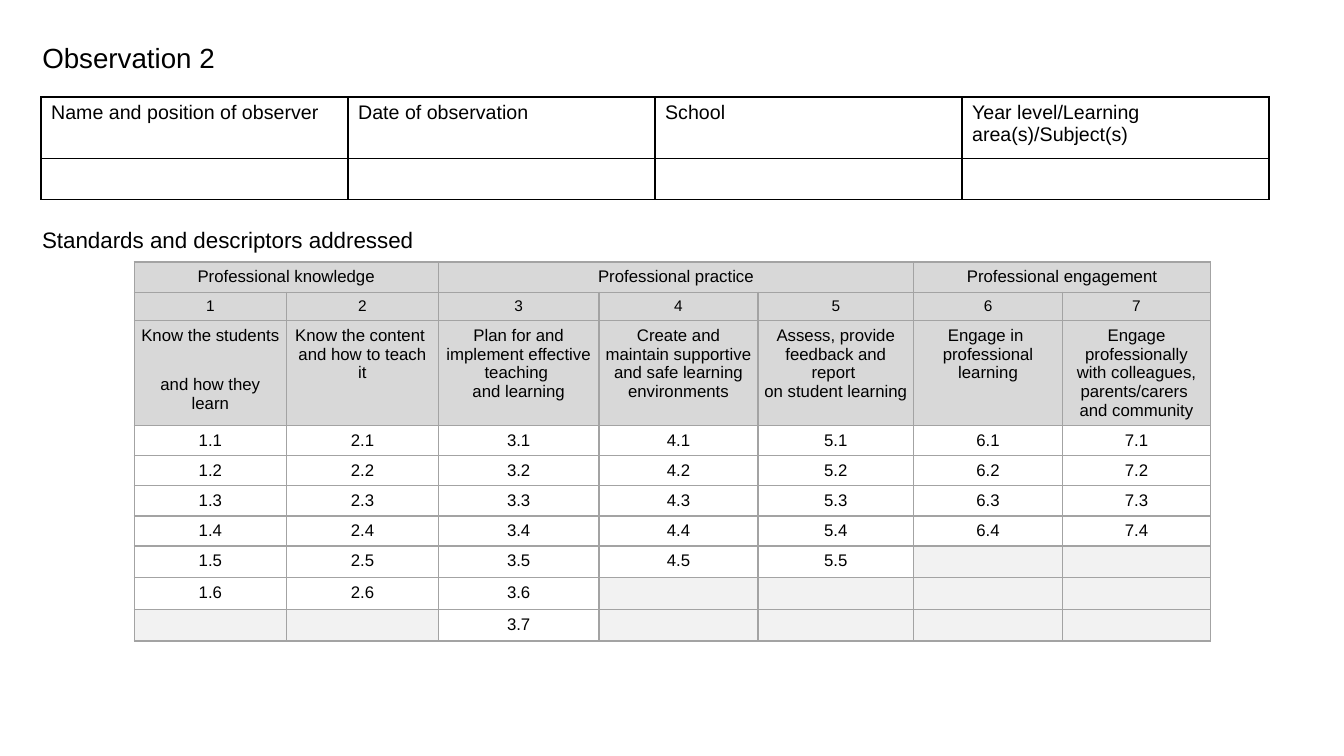
from lxml.etree import SubElement
from pptx import Presentation
from pptx.dml.color import RGBColor
from pptx.enum.text import MSO_ANCHOR, MSO_AUTO_SIZE, PP_ALIGN
from pptx.oxml.ns import qn
from pptx.util import Pt

FONT = "Arial"
BLACK, BORDER, HEADER, UNUSED = "000000", "A3A3A3", "D8D8D8", "F2F2F2"

OBSERVER_FIELDS = ["Name and position of observer", "Date of observation",
                   "School", "Year level/Learning area(s)/Subject(s)"]

# Domain name, first and last column
DOMAINS = [("Professional knowledge", 0, 1), ("Professional practice", 2, 4),
           ("Professional engagement", 5, 6)]

# Standard, number of descriptors, column width
STANDARDS = [
    ("Know the students \nand how they learn", 6, 108.9),
    ("Know the content \nand how to teach it", 6, 108.4),
    ("Plan for and implement effective teaching \nand learning", 7, 114.8),
    ("Create and maintain supportive and safe learning environments", 5, 113.6),
    ("Assess, provide feedback and report \non student learning", 5, 111.2),
    ("Engage in \nprofessional learning", 4, 106.3),
    ("Engage professionally with colleagues, parents/carers \nand community", 4, 105.8),
]


def rgb(color):
    return RGBColor.from_string(color)


def write(tf, text, size=12, color=BLACK, align=PP_ALIGN.LEFT, spacing=None):
    p = tf.paragraphs[0]
    p.alignment = align
    p.line_spacing = spacing
    for i, line in enumerate(text.split("\n")):
        if i:
            p.add_line_break()
        r = p.add_run()
        r.text = line
        r.font.name, r.font.size = FONT, Pt(size)
        r.font.color.rgb = rgb(color)


def write_heading(sp, text, size, left, top, width, height):
    sp.left, sp.top, sp.width, sp.height = Pt(left), Pt(top), Pt(width), Pt(height)
    tf = sp.text_frame
    tf.word_wrap = True
    tf.auto_size = MSO_AUTO_SIZE.NONE
    tf.vertical_anchor = MSO_ANCHOR.TOP
    write(tf, text, size=size, spacing=0.9)


def set_borders(cell, color, width=1):
    tc_pr = cell._tc.get_or_add_tcPr()
    for side in ("lnL", "lnR", "lnT", "lnB"):
        ln = SubElement(tc_pr, qn("a:" + side), w=str(Pt(width)))
        fill = SubElement(ln, qn("a:solidFill"))
        SubElement(fill, qn("a:srgbClr"), val=color)


def add_grid(s, left, top, widths, heights, border):
    """Add a plain table with every cell outlined and unfilled."""
    frame = s.shapes.add_table(len(heights), len(widths), Pt(left), Pt(top),
                               Pt(sum(widths)), Pt(sum(heights)))
    table = frame.table
    table.first_row = table.horz_banding = False
    for col, width in zip(table.columns, widths):
        col.width = Pt(width)
    for row, height in zip(table.rows, heights):
        row.height = Pt(height)
    for cell in table.iter_cells():
        set_borders(cell, border)
        cell.fill.background()
    return table


def fill_cell(cell, text="", fill=None, size=12):
    """Write a centred standards cell, or shade it when it has no text."""
    cell.margin_left = cell.margin_right = Pt(4)
    cell.margin_top = cell.margin_bottom = Pt(4)
    if fill:
        cell.fill.solid()
        cell.fill.fore_color.rgb = rgb(fill)
    if text:
        write(cell.text_frame, text, size=size, align=PP_ALIGN.CENTER)
    else:
        # Keeps an empty cell from stretching its row
        SubElement(cell.text_frame.paragraphs[0]._p, qn("a:endParaRPr"),
                   sz=str(size * 100))


def add_standards_table(s):
    most = max(count for _, count, _ in STANDARDS)
    widths = [width for _, _, width in STANDARDS]
    table = add_grid(s, 95.8, 187.2, widths, [21.4, 20, 75] + [21.4] * most, BORDER)

    # Domains across the top
    for name, first, last in DOMAINS:
        table.cell(0, first).merge(table.cell(0, last))
        fill_cell(table.cell(0, first), name, HEADER)

    # One column per standard
    for col, (name, count, _) in enumerate(STANDARDS):
        fill_cell(table.cell(1, col), str(col + 1), HEADER, size=11)
        fill_cell(table.cell(2, col), name, HEADER)
        for n in range(1, most + 1):
            cell = table.cell(n + 2, col)
            if n <= count:
                fill_cell(cell, f"{col + 1}.{n}")
            else:
                fill_cell(cell, fill=UNUSED)


def add_observer_table(s):
    table = add_grid(s, 29.3, 69.3, [219.3] * len(OBSERVER_FIELDS), [44, 29.5], BLACK)
    for col, field in enumerate(OBSERVER_FIELDS):
        write(table.cell(0, col).text_frame, field, size=14)


def main():
    prs = Presentation()
    prs.slide_width, prs.slide_height = Pt(960), Pt(540)
    s = prs.slides.add_slide(prs.slide_layouts[5])

    # Headings
    write_heading(s.shapes.title, "Observation 2", 19.8, 23, 28, 828, 54)
    subheading = s.shapes.add_textbox(0, 0, 0, 0)
    write_heading(subheading, "Standards and descriptors addressed", 16,
                  23, 160.5, 914, 25)

    # Tables
    add_standards_table(s)
    add_observer_table(s)

    prs.save("out.pptx")


if __name__ == "__main__":
    main()
